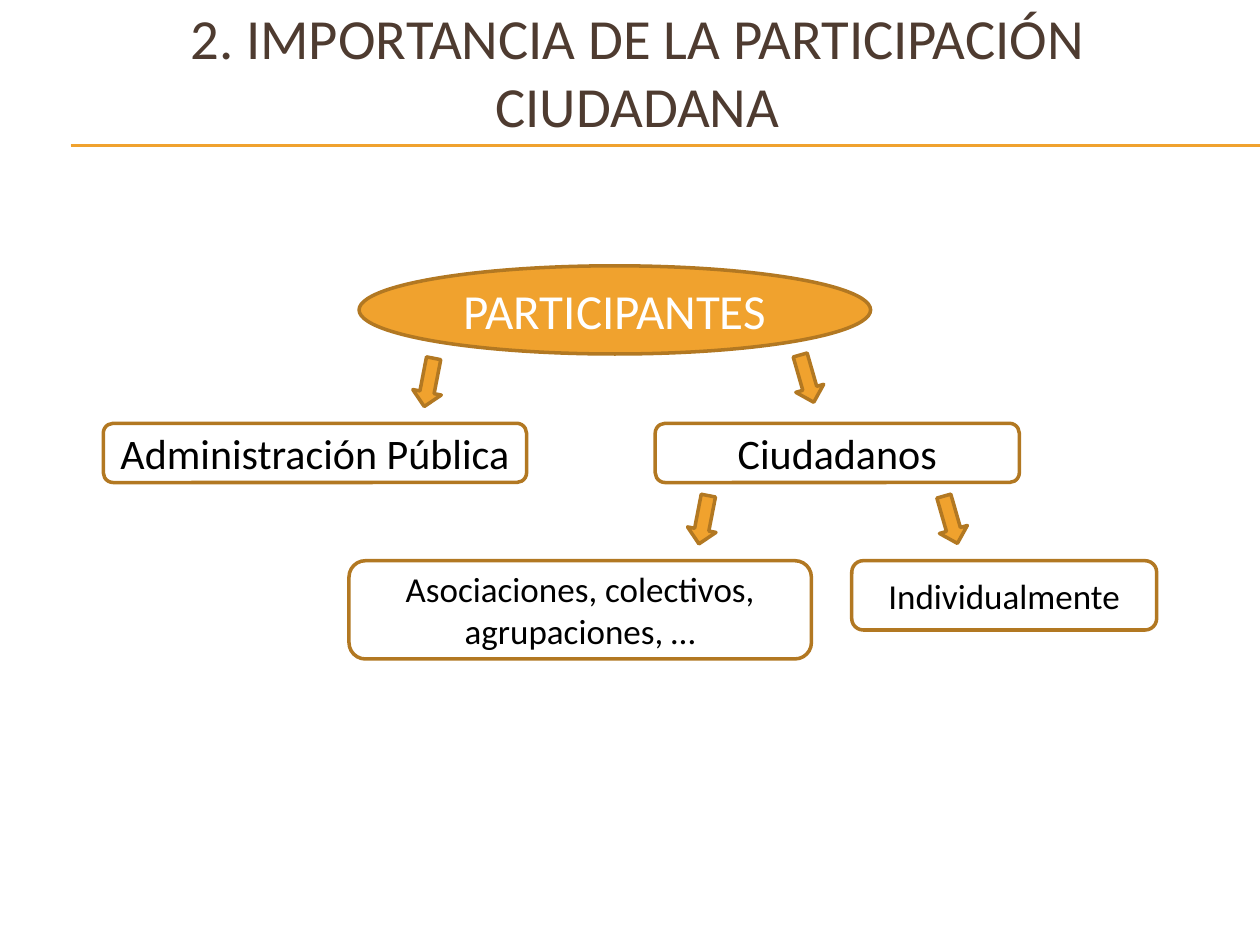
from dataclasses import dataclass

from lxml.etree import SubElement
from pptx import Presentation
from pptx.dml.color import RGBColor
from pptx.enum.shapes import MSO_CONNECTOR, MSO_SHAPE
from pptx.enum.text import MSO_ANCHOR, PP_ALIGN
from pptx.oxml.ns import qn
from pptx.util import Inches, Pt


@dataclass(frozen=True)
class Theme:
    font: str = "Calibri"
    accent: RGBColor = RGBColor(0xF0, 0xA2, 0x2E)
    outline: RGBColor = RGBColor(0xB2, 0x78, 0x22)
    title_color: RGBColor = RGBColor(0x4E, 0x3B, 0x30)
    white: RGBColor = RGBColor(0xFF, 0xFF, 0xFF)
    black: RGBColor = RGBColor(0, 0, 0)
    title_size: float = 32.4
    root_size: float = 28
    group_size: float = 24
    member_size: float = 20
    outline_width: float = 2
    rule_width: float = 0.75


THEME = Theme()
LEAN_LEFT, LEAN_RIGHT = 11, 344


def write_text(frame, text, size, color):
    frame.word_wrap = True
    frame.vertical_anchor = MSO_ANCHOR.MIDDLE
    paragraph = frame.paragraphs[0]
    paragraph.text = text
    paragraph.alignment = PP_ALIGN.CENTER
    paragraph.font.name = THEME.font
    paragraph.font.size = Pt(size)
    paragraph.font.color.rgb = color


def add_title(slide, text):
    title = slide.shapes.add_textbox(Inches(0.31), Inches(0.1), Inches(9.5), Inches(0.92))
    write_text(title.text_frame, text, THEME.title_size, THEME.title_color)


def add_rule(slide, y):
    rule = slide.shapes.add_connector(
        MSO_CONNECTOR.STRAIGHT, Inches(0.56), Inches(y), Inches(10), Inches(y))
    rule.line.color.rgb = THEME.accent
    rule.line.width = Pt(THEME.rule_width)
    SubElement(rule.element.spPr, qn("a:effectLst"))


def add_outlined(slide, kind, left, top, width, height, fill):
    outlined = slide.shapes.add_shape(
        kind, Inches(left), Inches(top), Inches(width), Inches(height))
    outlined.shadow.inherit = False
    outlined.fill.solid()
    outlined.fill.fore_color.rgb = fill
    outlined.line.color.rgb = THEME.outline
    outlined.line.width = Pt(THEME.outline_width)
    return outlined


def add_root(slide, text):
    root = add_outlined(slide, MSO_SHAPE.OVAL, 2.85, 2.11, 4.06, 0.7, THEME.accent)
    write_text(root.text_frame, text, THEME.root_size, THEME.white)


def add_box(slide, text, left, top, width, height, size):
    box = add_outlined(
        slide, MSO_SHAPE.ROUNDED_RECTANGLE, left, top, width, height, THEME.white)
    write_text(box.text_frame, text, size, THEME.black)


def add_branch_arrow(slide, left, top, lean):
    arrow = add_outlined(slide, MSO_SHAPE.DOWN_ARROW, left, top, 0.23, 0.39, THEME.accent)
    arrow.rotation = lean


def main():
    presentation = Presentation()
    presentation.slide_width = Inches(10)
    presentation.slide_height = Inches(7.5)
    slide = presentation.slides.add_slide(presentation.slide_layouts[6])

    for y in (1.15, 1.16):
        add_rule(slide, y)
    add_title(slide, "2. IMPORTANCIA DE LA PARTICIPACIÓN CIUDADANA")

    add_root(slide, "PARTICIPANTES")
    for text, left, width in (("Administración Pública", 0.82, 3.36),
                              ("Ciudadanos", 5.2, 2.89)):
        add_box(slide, text, left, 3.36, width, 0.47, THEME.group_size)
    for text, left, width, height in (
            ("Asociaciones, colectivos, agrupaciones, …", 2.77, 3.67, 0.78),
            ("Individualmente", 6.76, 2.42, 0.55)):
        add_box(slide, text, left, 4.45, width, height, THEME.member_size)

    for left, top, lean in ((3.29, 2.84, LEAN_LEFT), (6.29, 2.81, LEAN_RIGHT),
                            (5.47, 3.93, LEAN_LEFT), (7.43, 3.93, LEAN_RIGHT)):
        add_branch_arrow(slide, left, top, lean)

    presentation.save("out.pptx")


if __name__ == "__main__":
    main()
